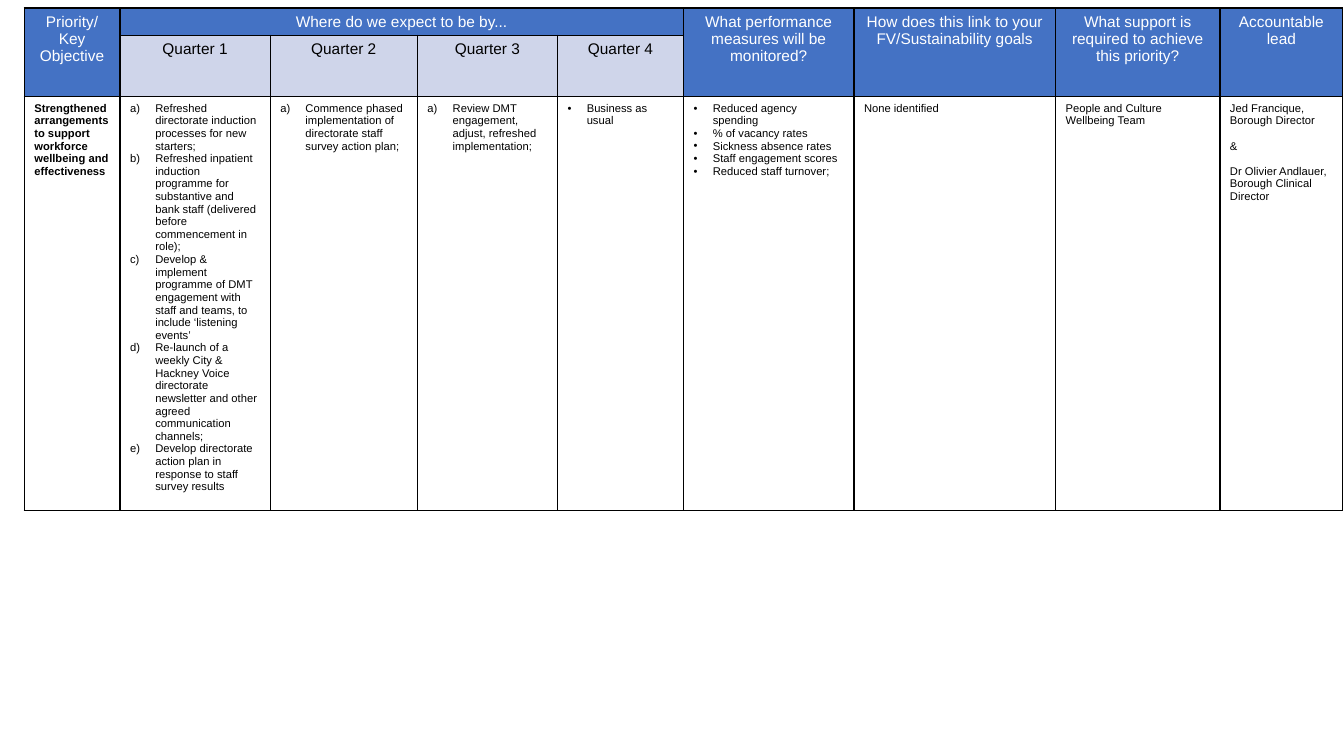
"""Build a one-slide table of quarterly plans for the workforce wellbeing objective."""
from lxml import etree
from pptx import Presentation
from pptx.dml.color import RGBColor
from pptx.enum.text import PP_ALIGN
from pptx.oxml import parse_xml
from pptx.oxml.ns import nsdecls, qn
from pptx.util import Inches, Pt

CENTER, LEFT = PP_ALIGN.CENTER, PP_ALIGN.LEFT
BLUE = RGBColor(0x44, 0x72, 0xC4)
PALE = RGBColor(0xCF, 0xD5, 0xEA)
WHITE = RGBColor(0xFF, 0xFF, 0xFF)
BLACK = RGBColor(0x00, 0x00, 0x00)

COL_WIDTHS = [0.95, 1.49, 1.46, 1.39, 1.25, 1.69, 2, 1.63, 1.22]
ROW_HEIGHTS = [0.27, 0.61, 4.1]
HEADERS = {
    0: "Priority/\nKey Objective",
    1: "Where do we expect to be by...",
    5: "What performance measures will be monitored?",
    6: "How does this link to your FV/Sustainability goals",
    7: "What support is required to achieve this priority?",
    8: "Accountable lead",
}
PLAN = [
    ("", ["Strengthened arrangements to support workforce wellbeing and effectiveness"]),
    ("letter", [
        "Refreshed directorate induction processes for new starters;",
        "Refreshed inpatient induction programme for substantive and bank staff "
        "(delivered before commencement in role);",
        "Develop & implement programme of DMT engagement with staff and teams, "
        "to include ‘listening events’",
        "Re-launch of a weekly City & Hackney Voice directorate newsletter and "
        "other agreed communication channels;",
        "Develop directorate action plan in response to staff survey results",
    ]),
    ("letter", ["Commence phased implementation of directorate staff survey action plan;"]),
    ("letter", ["Review DMT engagement, adjust, refreshed implementation;"]),
    ("dot", ["Business as usual"]),
    ("dot", [
        "Reduced agency spending",
        "% of vacancy rates",
        "Sickness absence rates",
        "Staff engagement scores",
        "Reduced staff turnover;",
    ]),
    ("", ["None identified"]),
    ("", ["People and Culture", "Wellbeing Team"]),
    ("spaced", [
        "Jed Francique, Borough Director",
        "&",
        "Dr Olivier Andlauer, Borough Clinical Director",
    ]),
]
BULLETS = {
    "letter": (0.25, "buAutoNum", {"type": "alphaLcParenR"}),
    "dot": (0.19, "buChar", {"char": "•"}),
}


def fill_cell(cell, text, fill, color, size, align, bold=False):
    cell.fill.solid()
    cell.fill.fore_color.rgb = fill
    cell.text_frame.text = text
    for p in cell.text_frame.paragraphs:
        p.alignment = align
        for r in p.runs:
            r.font.name = "Arial"
            r.font.size = Pt(size)
            r.font.bold = bold
            r.font.color.rgb = color


prs = Presentation()
prs.slide_width, prs.slide_height = Inches(13.33), Inches(7.5)
s = prs.slides.add_slide(prs.slide_layouts[6])
frame = s.shapes.add_table(
    len(ROW_HEIGHTS), len(COL_WIDTHS), Inches(0.24), Inches(0.08),
    Inches(sum(COL_WIDTHS)), Inches(sum(ROW_HEIGHTS)))
table = frame.table
for column, width in zip(table.columns, COL_WIDTHS):
    column.width = Inches(width)
for row, height in zip(table.rows, ROW_HEIGHTS):
    row.height = Inches(height)

for col, text in HEADERS.items():
    cell = table.cell(0, col)
    cell.merge(table.cell(0, 4) if col == 1 else table.cell(1, col))
    fill_cell(cell, text, BLUE, WHITE, 11, CENTER)

for quarter in range(1, 5):
    fill_cell(table.cell(1, quarter), f"Quarter {quarter}", PALE, BLACK, 11, CENTER)

for col, (style, lines) in enumerate(PLAN):
    cell = table.cell(2, col)
    fill_cell(cell, "\n".join(lines), WHITE, BLACK, 8, LEFT, bold=col == 0)
    for i, p in enumerate(cell.text_frame.paragraphs):
        if style in BULLETS:
            indent, tag, attrs = BULLETS[style]
            pPr = p._p.get_or_add_pPr()
            pPr.set("marL", str(Inches(indent)))
            pPr.set("indent", str(-Inches(indent)))
            etree.SubElement(pPr, qn("a:buFont"), typeface="Arial")
            etree.SubElement(pPr, qn(f"a:{tag}"), attrs)
        elif style == "spaced" and i:
            p.space_before = Pt(9)

for cell in table.iter_cells():
    tcPr = cell._tc.get_or_add_tcPr()
    for i, side in enumerate("LRTB"):
        tcPr.insert(i, parse_xml(
            f'<a:ln{side} {nsdecls("a")} w="{Pt(1)}"><a:solidFill>'
            f'<a:srgbClr val="{BLACK}"/></a:solidFill></a:ln{side}>'))

prs.save("out.pptx")
